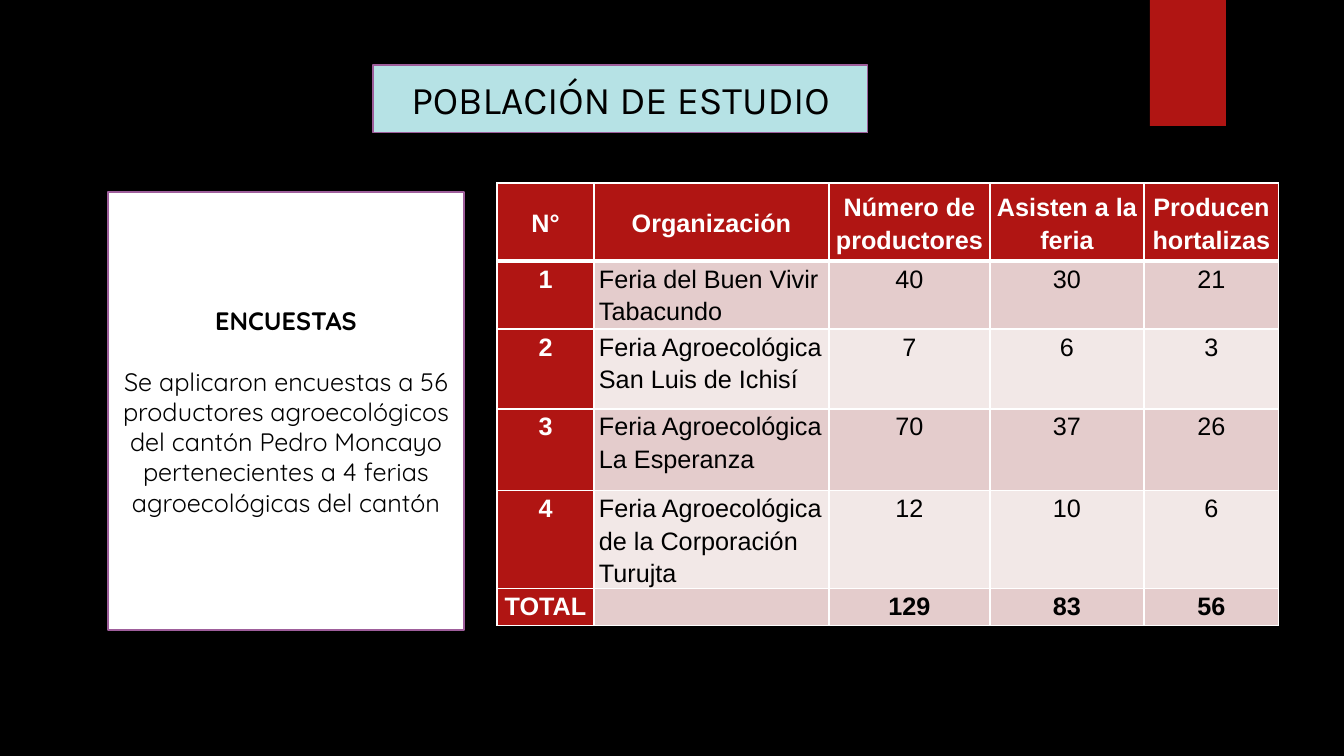
import pptx
import pptx.util
import pptx.dml.color
import pptx.enum.shapes
import pptx.enum.text
import pptx.oxml
import pptx.oxml.ns

RGBColor = pptx.dml.color.RGBColor
ALIGN = pptx.enum.text.PP_ALIGN
ANCHOR = pptx.enum.text.MSO_ANCHOR
RECTANGLE = pptx.enum.shapes.MSO_SHAPE.RECTANGLE

BLACK = RGBColor(0x00, 0x00, 0x00)
WHITE = RGBColor(0xFF, 0xFF, 0xFF)
RED = RGBColor(0xB0, 0x15, 0x13)
AQUA = RGBColor(0xB6, 0xE2, 0xE5)
PURPLE = RGBColor(0x9E, 0x5E, 0x9B)
BANDS = (RGBColor(0xE4, 0xCC, 0xCC), RGBColor(0xF2, 0xE8, 0xE7))

SLIDE_SIZE = (1344, 756)
TITLE = "POBLACIÓN DE ESTUDIO"
TITLE_AREA = (373, 65, 495, 68)
RIBBON_AREA = (1150, 0, 76, 126)
SURVEY_AREA = (108, 192, 356, 438)
SURVEY = (
    "ENCUESTAS",
    "Se aplicaron encuestas a 56 productores agroecológicos del cantón "
    "Pedro Moncayo pertenecientes a 4 ferias agroecológicas del cantón",
)
TABLE_ORIGIN = (497, 183)
COLUMN_WIDTHS = (97, 235, 161, 154, 135)
ROW_HEIGHTS = (78, 68, 80, 82, 57, 37)
ROWS = (
    ("N°", "Organización", "Número de productores", "Asisten a la feria", "Producen hortalizas"),
    ("1", "Feria del Buen Vivir Tabacundo", "40", "30", "21"),
    ("2", "Feria Agroecológica San Luis de Ichisí", "7", "6", "3"),
    ("3", "Feria Agroecológica La Esperanza", "70", "37", "26"),
    ("4", "Feria Agroecológica de la Corporación Turujta", "12", "10", "6"),
    ("TOTAL", "", "129", "83", "56"),
)


def px(length):
    return pptx.util.Emu(round(length * 914400 / 100.8))


def format_paragraph(paragraph, font_name, size, color, bold=False, align=ALIGN.CENTER):
    paragraph.alignment = align
    for run in paragraph.runs:
        run.font.name = font_name
        run.font.size = pptx.util.Pt(size)
        run.font.color.rgb = color
        run.font.bold = bold


def paint(shape, fill, line=None, width=0):
    shape.fill.solid()
    shape.fill.fore_color.rgb = fill
    if line is None:
        shape.line.fill.background()
    else:
        shape.line.color.rgb = line
        shape.line.width = pptx.util.Pt(width)


def add_rectangle(slide, area, fill, line=None, width=0):
    shape = slide.shapes.add_shape(RECTANGLE, *map(px, area))
    shape.shadow.inherit = False
    paint(shape, fill, line, width)
    return shape


def add_borders(cell, widths):
    properties = cell._tc.get_or_add_tcPr()
    for side, width in zip("LRTB", widths):
        properties.append(pptx.oxml.parse_xml(
            f'<a:ln{side} {pptx.oxml.ns.nsdecls("a")} w="{pptx.util.Pt(width)}">'
            f'<a:solidFill><a:srgbClr val="{WHITE}"/></a:solidFill></a:ln{side}>'
        ))


def add_title(slide):
    title = slide.shapes.title
    title.left, title.top, title.width, title.height = map(px, TITLE_AREA)
    paint(title, AQUA, PURPLE, 0.75)
    frame = title.text_frame
    frame.text = TITLE
    frame.auto_size = pptx.enum.text.MSO_AUTO_SIZE.NONE
    frame.vertical_anchor = ANCHOR.MIDDLE
    format_paragraph(frame.paragraphs[0], "Karla", 28, BLACK)


def add_survey(slide):
    frame = add_rectangle(slide, SURVEY_AREA, WHITE, PURPLE, 1.5).text_frame
    frame.word_wrap = True
    frame.vertical_anchor = ANCHOR.MIDDLE
    frame.text = "\n".join(SURVEY)
    heading, body = frame.paragraphs
    format_paragraph(heading, "Quicksand", 18, BLACK, bold=True)
    format_paragraph(body, "Quicksand", 18, BLACK)
    body.space_before = pptx.util.Pt(22)


def add_population_table(slide):
    size = (sum(COLUMN_WIDTHS), sum(ROW_HEIGHTS))
    table = slide.shapes.add_table(
        len(ROWS), len(COLUMN_WIDTHS), *map(px, TABLE_ORIGIN + size)
    ).table
    for column, width in zip(table.columns, COLUMN_WIDTHS):
        column.width = px(width)
    for row, height in zip(table.rows, ROW_HEIGHTS):
        row.height = px(height)
    for i, values in enumerate(ROWS):
        for j, value in enumerate(values):
            cell = table.cell(i, j)
            header = i == 0 or j == 0
            cell.margin_left = cell.margin_right = px(5)
            cell.margin_top = cell.margin_bottom = 0
            cell.vertical_anchor = ANCHOR.MIDDLE if i == 0 else ANCHOR.TOP
            add_borders(cell, (1, 1, 3 if i == 1 else 1, 3 if i == 0 else 1))
            cell.fill.solid()
            cell.fill.fore_color.rgb = RED if header else BANDS[(i - 1) % 2]
            cell.text_frame.text = value
            paragraph = cell.text_frame.paragraphs[0]
            paragraph.line_spacing = 1.15
            format_paragraph(
                paragraph, "Arial", 18, WHITE if header else BLACK,
                bold=header or i == len(ROWS) - 1,
                align=ALIGN.LEFT if j == 1 and i > 0 else ALIGN.CENTER,
            )


def main():
    presentation = pptx.Presentation()
    presentation.slide_width, presentation.slide_height = map(px, SLIDE_SIZE)
    slide = presentation.slides.add_slide(presentation.slide_layouts.get_by_name("Title Only"))
    slide.background.fill.solid()
    slide.background.fill.fore_color.rgb = BLACK
    add_rectangle(slide, RIBBON_AREA, RED)
    add_title(slide)
    add_survey(slide)
    add_population_table(slide)
    presentation.save("out.pptx")


if __name__ == "__main__":
    main()
